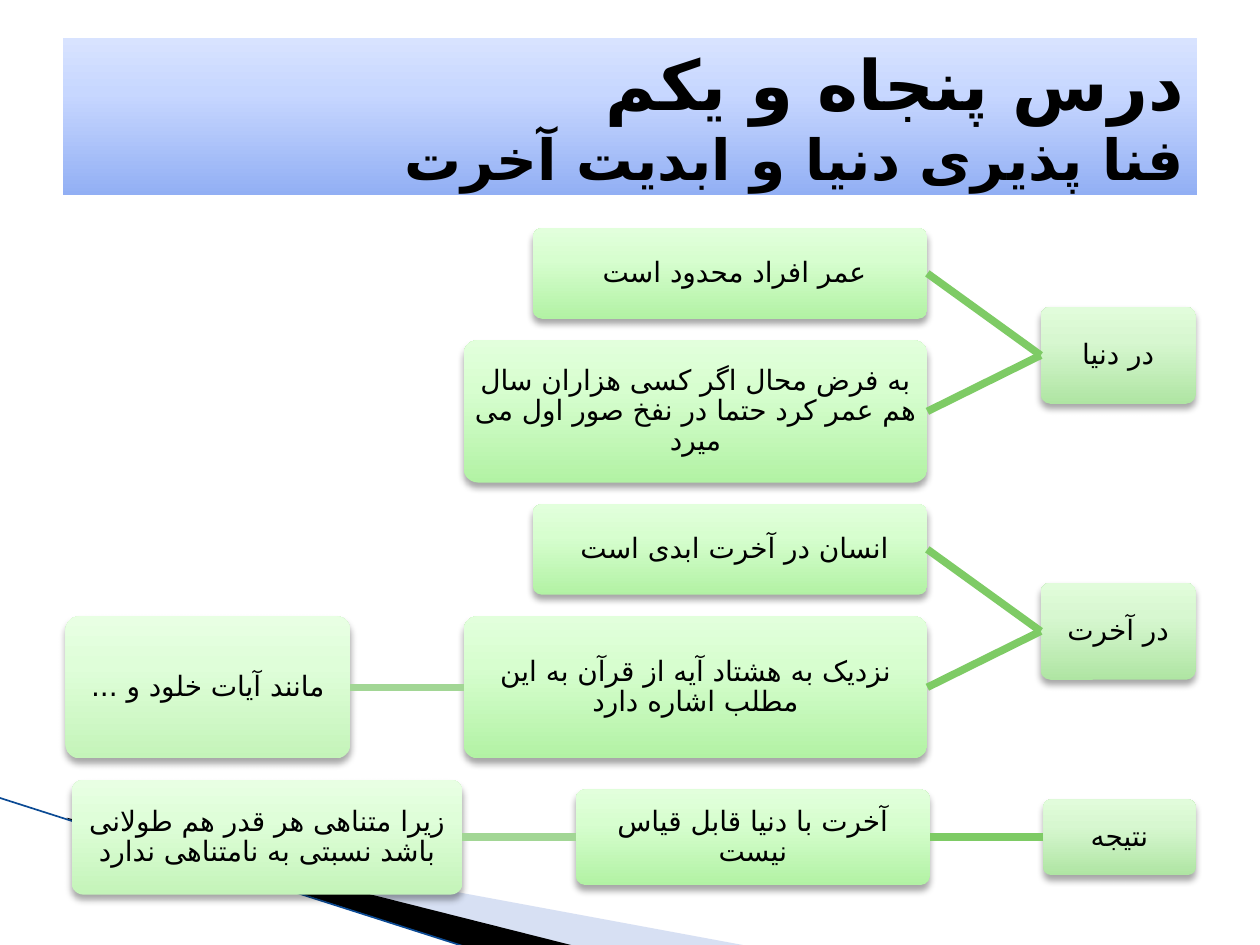
"""Build the lesson 51 slide: a right-to-left tree under a gradient title."""
from lxml import etree
from pptx import Presentation
from pptx import util as u
from pptx.dml import color
from pptx.enum import shapes, text
from pptx.oxml import ns

FONT, ARABIC_FONT = "DejaVu Sans Mono", "DejaVu Sans"
TITLE = [("درس پنجاه و یکم", 39.6), ("فنا پذیری دنیا و ابدیت آخرت", 32.4)]
TITLE_STOPS = ["92AFF4", "C7D7FF", "D8E3FF"]
LEVEL_STOPS = [
    ["AFE5A3", "D7F7D0", "E1FCDB"],
    ["B2F2A4", "D7FECF", "E2FFDC"],
    ["C4F4B9", "DFFED9", "E8FFE3"],
]
LINK_COLORS = ["7ECB65", "A2D695"]
TREE = [
    ("در دنیا", 1.23, 0.77, [
        ("عمر افراد محدود است ", 3.13, 0.72, []),
        ("به فرض محال اگر کسی هزاران سال هم عمر کرد حتما در نفخ صور اول می میرد", 3.68, 1.13, []),
    ]),
    ("در آخرت", 1.23, 0.77, [
        ("انسان در آخرت ابدی است ", 3.13, 0.72, []),
        ("نزدیک به هشتاد آیه از قرآن به این مطلب اشاره دارد", 3.68, 1.13, [
            ("مانند آیات خلود و ...", 2.26, 1.13, []),
        ]),
    ]),
    ("نتیجه", 1.21, 0.6, [
        ("آخرت با دنیا قابل قیاس نیست", 2.81, 0.76, [
            ("زیرا متناهی هر قدر هم طولانی باشد نسبتی به نامتناهی ندارد", 3.1, 0.91, []),
        ]),
    ]),
]
WEDGES = [
    ("9DB2E1", 40, [(0.55, 6.51), (5.95, 7.51), (4.56, 7.51), (0.55, 6.5)]),
    ("000000", 100, [(0.53, 6.49), (4.57, 7.51), (3.72, 7.52), (0.54, 6.5)]),
]
TREE_RIGHT, TREE_TOP, LEVEL_GAP, ROW_GAP = 9.49, 1.81, 0.9, 0.17


def rgb(code):
    return color.RGBColor.from_string(code)


def add_node(parent, tag, **attrs):
    return etree.SubElement(parent, ns.qn(tag), {k: str(v) for k, v in attrs.items()})


def fill_gradient(shape, stops):
    shape.fill.gradient()
    shape.fill.gradient_angle = 90
    stop_list = shape._element.spPr.find(ns.qn("a:gradFill")).find(ns.qn("a:gsLst"))
    for old in list(stop_list):
        stop_list.remove(old)
    for position, code in zip((0, 65000, 100000), stops):
        add_node(add_node(stop_list, "a:gs", pos=position), "a:srgbClr", val=code)


def add_shadow(shape):
    effects = add_node(shape._element.spPr, "a:effectLst")
    shadow = add_node(effects, "a:outerShdw", blurRad=u.Pt(4), dist=u.Pt(3),
                      dir=5400000, algn="ctr", rotWithShape=0)
    add_node(add_node(shadow, "a:srgbClr", val="000000"), "a:alpha", val=35000)


def add_line(slide, start, end, code, width):
    line = slide.shapes.add_connector(
        shapes.MSO_CONNECTOR.STRAIGHT, *(u.Inches(v) for v in (*start, *end)))
    line.line.color.rgb = rgb(code)
    line.line.width = u.Pt(width)
    add_node(line._element.spPr, "a:effectLst")
    return line


def add_wedge(slide, code, opacity, points):
    start, *rest = [(u.Inches(x), u.Inches(y)) for x, y in points]
    builder = slide.shapes.build_freeform(*start)
    builder.add_line_segments(rest)
    wedge = builder.convert_to_shape()
    wedge.shadow.inherit = False
    wedge.line.fill.background()
    wedge.fill.solid()
    wedge.fill.fore_color.rgb = rgb(code)
    if opacity < 100:
        solid = wedge._element.spPr.find(ns.qn("a:solidFill"))
        add_node(solid[0], "a:alpha", val=opacity * 1000)


def style_persian(paragraph, alignment):
    paragraph.alignment = alignment
    properties = paragraph._p.get_or_add_pPr()
    properties.set("rtl", "1")
    paragraph.font.color.rgb = rgb("000000")
    paragraph.font.name = FONT
    add_node(properties.find(ns.qn("a:defRPr")), "a:cs", typeface=ARABIC_FONT)


def add_title(slide):
    title = slide.shapes.title
    title.left, title.top, title.width, title.height = map(u.Inches, (0.5, 0.3, 9, 1.25))
    fill_gradient(title, TITLE_STOPS)
    frame = title.text_frame
    frame.auto_size = text.MSO_AUTO_SIZE.NONE
    frame.vertical_anchor = text.MSO_ANCHOR.MIDDLE
    heading = frame.paragraphs[0]
    for index, (words, size) in enumerate(TITLE):
        if index:
            heading.add_line_break()
        run = heading.add_run()
        run.text, run.font.size = words, u.Pt(size)
    style_persian(heading, text.PP_ALIGN.RIGHT)
    heading.font.bold = True


def add_box(slide, label, level, left, top, width, height):
    box = slide.shapes.add_shape(
        shapes.MSO_SHAPE.ROUNDED_RECTANGLE, *map(u.Inches, (left, top, width, height)))
    box.adjustments[0] = 0.1
    fill_gradient(box, LEVEL_STOPS[level])
    box.line.fill.background()
    add_shadow(box)
    frame = box.text_frame
    frame.word_wrap = True
    frame.vertical_anchor = text.MSO_ANCHOR.MIDDLE
    frame.margin_left = frame.margin_right = u.Inches(0.01)
    frame.margin_top = frame.margin_bottom = u.Inches(0.01)
    caption = frame.paragraphs[0]
    caption.text = label
    caption.line_spacing = 0.9
    style_persian(caption, text.PP_ALIGN.CENTER)
    caption.font.size = u.Pt(16)
    return box


def span(branch):
    _, _, height, children = branch
    stacked = sum(map(span, children)) + ROW_GAP * (len(children) - 1)
    return max(height, stacked)


def add_branch(slide, branch, right, top, level=0):
    label, width, height, children = branch
    left = right - width
    box = add_box(slide, label, level, left, top + (span(branch) - height) / 2, width, height)
    for child in children:
        child_box = add_branch(slide, child, left - LEVEL_GAP, top, level + 1)
        link = add_line(slide, (0, 0), (1, 1), LINK_COLORS[level], 4.33)
        link.begin_connect(box, 1)
        link.end_connect(child_box, 3)
        top += span(child) + ROW_GAP
    return box


def main():
    prs = Presentation()
    prs.slide_width, prs.slide_height = u.Inches(10), u.Inches(7.5)
    slide = prs.slides.add_slide(prs.slide_layouts[5])
    for wedge in WEDGES:
        add_wedge(slide, *wedge)
    add_line(slide, (-0.01, 6.33), (3.71, 7.52), "0B4A94", 0.95)
    add_title(slide)
    top = TREE_TOP
    for branch in TREE:
        add_branch(slide, branch, TREE_RIGHT, top)
        top += span(branch) + ROW_GAP
    prs.save("out.pptx")


if __name__ == "__main__":
    main()
